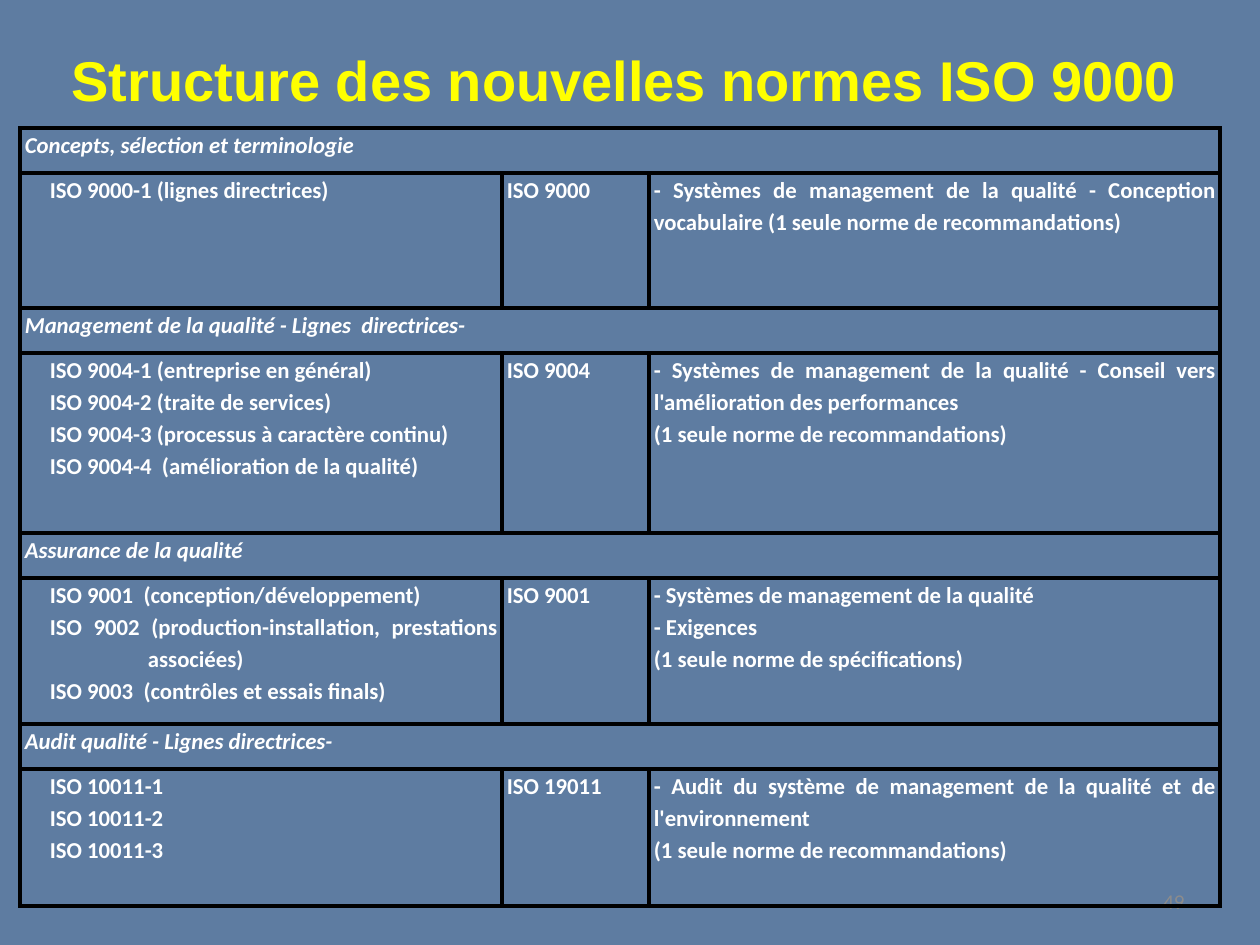
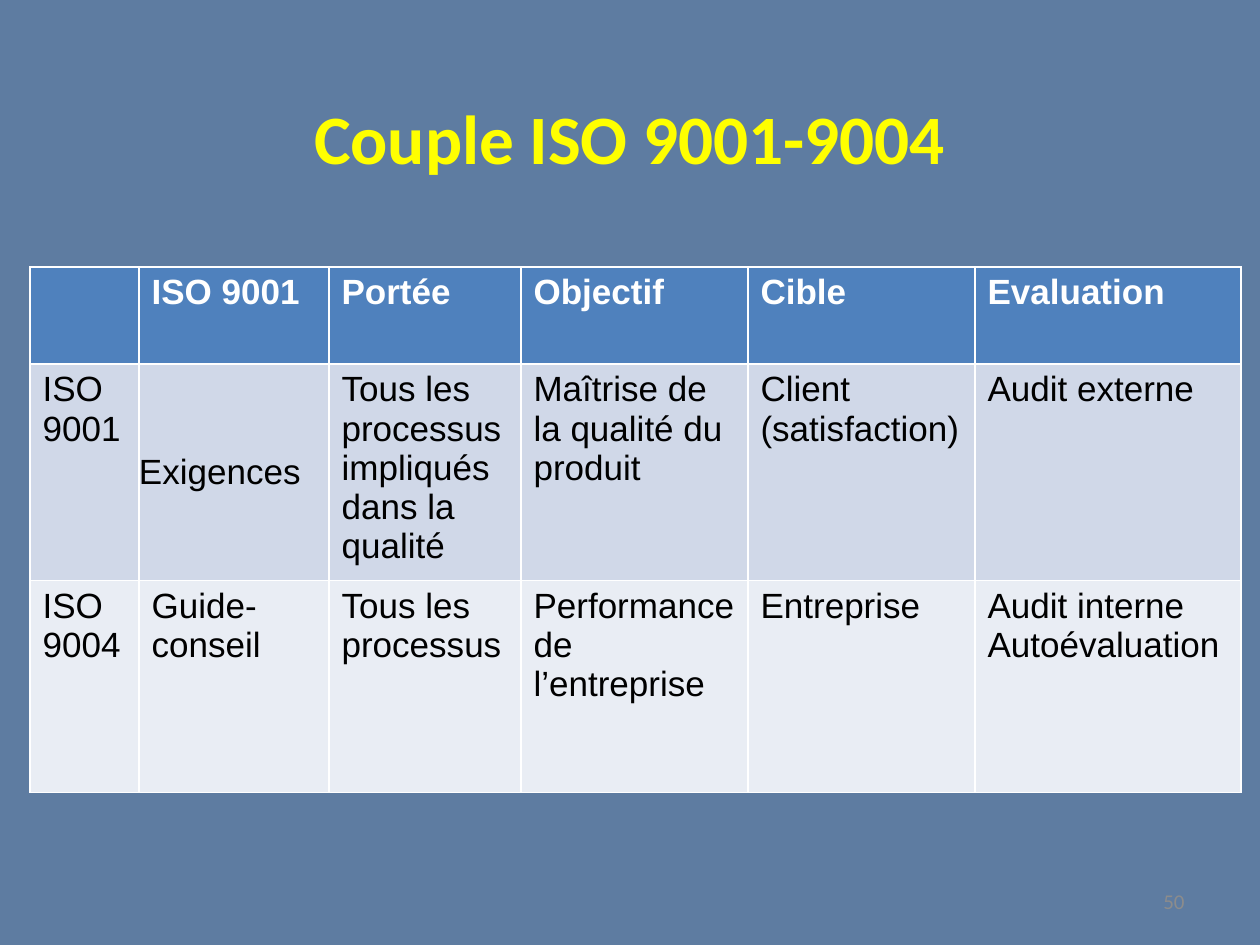
"""Build two slides on the ISO 9000 family of standards."""
from lxml import etree
from pptx import Presentation
from pptx.dml.color import RGBColor
from pptx.enum.text import MSO_ANCHOR, MSO_AUTO_SIZE, PP_ALIGN
from pptx.oxml.ns import qn
from pptx.util import Emu, Pt

LEFT, CENTER, RIGHT, JUSTIFY = PP_ALIGN.LEFT, PP_ALIGN.CENTER, PP_ALIGN.RIGHT, PP_ALIGN.JUSTIFY
TOP, MIDDLE = MSO_ANCHOR.TOP, MSO_ANCHOR.MIDDLE
NO_AUTOSIZE = MSO_AUTO_SIZE.NONE

BACKGROUND = RGBColor(0x5E, 0x7C, 0xA1)
YELLOW = RGBColor(0xFF, 0xFF, 0x00)
WHITE = RGBColor(0xFF, 0xFF, 0xFF)
BLACK = RGBColor(0x00, 0x00, 0x00)
GREY = RGBColor(0x8C, 0x8C, 0x8C)
HEADER_BLUE = RGBColor(0x4F, 0x81, 0xBD)
BAND_DARK = RGBColor(0xD0, 0xD8, 0xE8)
BAND_LIGHT = RGBColor(0xE9, 0xED, 0xF4)

PX_PER_INCH = 126
TITLE_ONLY = 5
NUMBER_BOX = (903, 876, 294, 50)

FAMILIES = [
    ("Concepts, sélection et terminologie",
     ["ISO 9000-1 (lignes directrices)"],
     "ISO 9000",
     ["- Systèmes de management de la qualité - Conception vocabulaire "
      "(1 seule norme de recommandations)"]),
    ("Management de la qualité - Lignes  directrices-",
     ["ISO 9004-1 (entreprise en général)",
      "ISO 9004-2 (traite de services)",
      "ISO 9004-3 (processus à caractère continu)",
      "ISO 9004-4  (amélioration de la qualité)"],
     "ISO 9004",
     ["- Systèmes de management de la qualité - Conseil vers l'amélioration des performances",
      "(1 seule norme de recommandations)"]),
    ("Assurance de la qualité",
     ["ISO 9001  (conception/développement)",
      "ISO 9002 (production-installation, prestations associées)",
      "ISO 9003  (contrôles et essais finals)"],
     "ISO 9001",
     ["- Systèmes de management de la qualité",
      "- Exigences",
      "(1 seule norme de spécifications)"]),
    ("Audit qualité - Lignes directrices-",
     ["ISO 10011-1", "ISO 10011-2", "ISO 10011-3"],
     "ISO 19011",
     ["- Audit du système de management de la qualité et de l'environnement",
      "(1 seule norme de recommandations)"]),
]
FAMILY_COLS = [482, 147, 571]
HEADING_HEIGHT = 45
DETAIL_HEIGHTS = [135, 180, 146, 137]
FAMILY_INSETS = (5, 0, 5, 0)
OLD_INDENT = (31, -6)
WRAPPED_INDENT = (123, -98)

COMPARISON = [
    ["", "ISO 9001", "Portée", "Objectif", "Cible", "Evaluation"],
    ["ISO 9001", "Exigences", "Tous les processus impliqués dans la qualité",
     "Maîtrise de la qualité du produit", "Client (satisfaction)", "Audit externe"],
    ["ISO 9004", "Guide-conseil", "Tous les processus", "Performance de l’entreprise",
     "Entreprise", "Audit interne\nAutoévaluation"],
]
COMPARISON_COLS = [109, 190, 192, 227, 227, 266]
COMPARISON_ROWS = [97, 212, 212]
COMPARISON_FILLS = [HEADER_BLUE, BAND_DARK, BAND_LIGHT]


def px(n):
    return Emu(round(n * 914400 / PX_PER_INCH))


def style(p, font, size, color, bold=False, italic=False, align=LEFT):
    p.alignment = align
    f = p.font
    f.name, f.size, f.bold, f.italic = font, Pt(size), bold, italic
    f.color.rgb = color


def add_slide(prs, number, title, box, font, size, align, anchor):
    s = prs.slides.add_slide(prs.slide_layouts[TITLE_ONLY])
    sp = s.shapes.title
    sp.left, sp.top, sp.width, sp.height = map(px, box)
    tf = sp.text_frame
    tf.text = title
    tf.word_wrap, tf.auto_size, tf.vertical_anchor = True, NO_AUTOSIZE, anchor
    style(tf.paragraphs[0], font, size, YELLOW, bold=True, align=align)

    tf = s.shapes.add_textbox(*map(px, NUMBER_BOX)).text_frame
    tf.text = str(number)
    tf.word_wrap, tf.vertical_anchor = True, MIDDLE
    style(tf.paragraphs[0], "Calibri", 12, GREY, align=RIGHT)
    return s


def add_table(s, left, top, cols, rows):
    box = map(px, (left, top, sum(cols), sum(rows)))
    tbl = s.shapes.add_table(len(rows), len(cols), *box).table
    for col, width in zip(tbl.columns, cols):
        col.width = px(width)
    for row, height in zip(tbl.rows, rows):
        row.height = px(height)
    return tbl


def set_borders(cell, color, width):
    tcPr = cell._tc.get_or_add_tcPr()
    for side in "LRTB":
        ln = etree.SubElement(tcPr, qn(f"a:ln{side}"), w=str(Pt(width)))
        fill = etree.SubElement(ln, qn("a:solidFill"))
        etree.SubElement(fill, qn("a:srgbClr"), val=str(color))


def set_insets(cell, left, top, right, bottom):
    cell.margin_left, cell.margin_top = px(left), px(top)
    cell.margin_right, cell.margin_bottom = px(right), px(bottom)


def fill_family_cell(cell, lines, italic=False):
    cell.text = "\n".join(lines)
    for p in cell.text_frame.paragraphs:
        style(p, "Calibri", 13, WHITE, bold=True, italic=italic, align=JUSTIFY)
        p.line_spacing = 1.15


def indent(p, margin, first_line):
    pPr = p._p.get_or_add_pPr()
    pPr.set("marL", str(px(margin)))
    pPr.set("indent", str(px(first_line)))


def build_structure(prs):
    s = add_slide(prs, 49, "Structure des nouvelles normes ISO 9000",
                  (59, 39, 1180, 81), "Arial", 32, LEFT, TOP)
    heights = [h for detail in DETAIL_HEIGHTS for h in (HEADING_HEIGHT, detail)]
    tbl = add_table(s, 20, 128, FAMILY_COLS, heights)
    tbl.first_row = tbl.horz_banding = False
    for cell in tbl.iter_cells():
        set_borders(cell, BLACK, 2.25)
        cell.fill.background()
        set_insets(cell, *FAMILY_INSETS)
    for i, (heading, old, new, scope) in enumerate(FAMILIES):
        row = 2 * i
        tbl.cell(row, 0).merge(tbl.cell(row, 2))
        fill_family_cell(tbl.cell(row, 0), [heading], italic=True)
        for col, lines in enumerate((old, [new], scope)):
            fill_family_cell(tbl.cell(row + 1, col), lines)
        for p in tbl.cell(row + 1, 0).text_frame.paragraphs:
            indent(p, *(WRAPPED_INDENT if "9002" in p.text else OLD_INDENT))


def build_comparison(prs):
    s = add_slide(prs, 50, "Couple ISO 9001-9004",
                  (63, 96, 1134, 81), "Calibri", 39.6, CENTER, MIDDLE)
    tbl = add_table(s, 30, 267, COMPARISON_COLS, COMPARISON_ROWS)
    for i, (texts, fill) in enumerate(zip(COMPARISON, COMPARISON_FILLS)):
        header = i == 0
        for j, text in enumerate(texts):
            cell = tbl.cell(i, j)
            cell.fill.solid()
            cell.fill.fore_color.rgb = fill
            cell.margin_bottom = 0
            cell.text = text
            for p in cell.text_frame.paragraphs:
                style(p, "Arial", 20, WHITE if header else BLACK, bold=header)
    requirements = tbl.cell(1, 1)
    requirements.vertical_anchor = MIDDLE
    set_insets(requirements, 0, 0, 5, 0)


def main():
    prs = Presentation()
    prs.slide_width, prs.slide_height = px(1260), px(945)
    background = prs.slide_master.background.fill
    background.solid()
    background.fore_color.rgb = BACKGROUND
    build_structure(prs)
    build_comparison(prs)
    prs.save("out.pptx")


if __name__ == "__main__":
    main()
